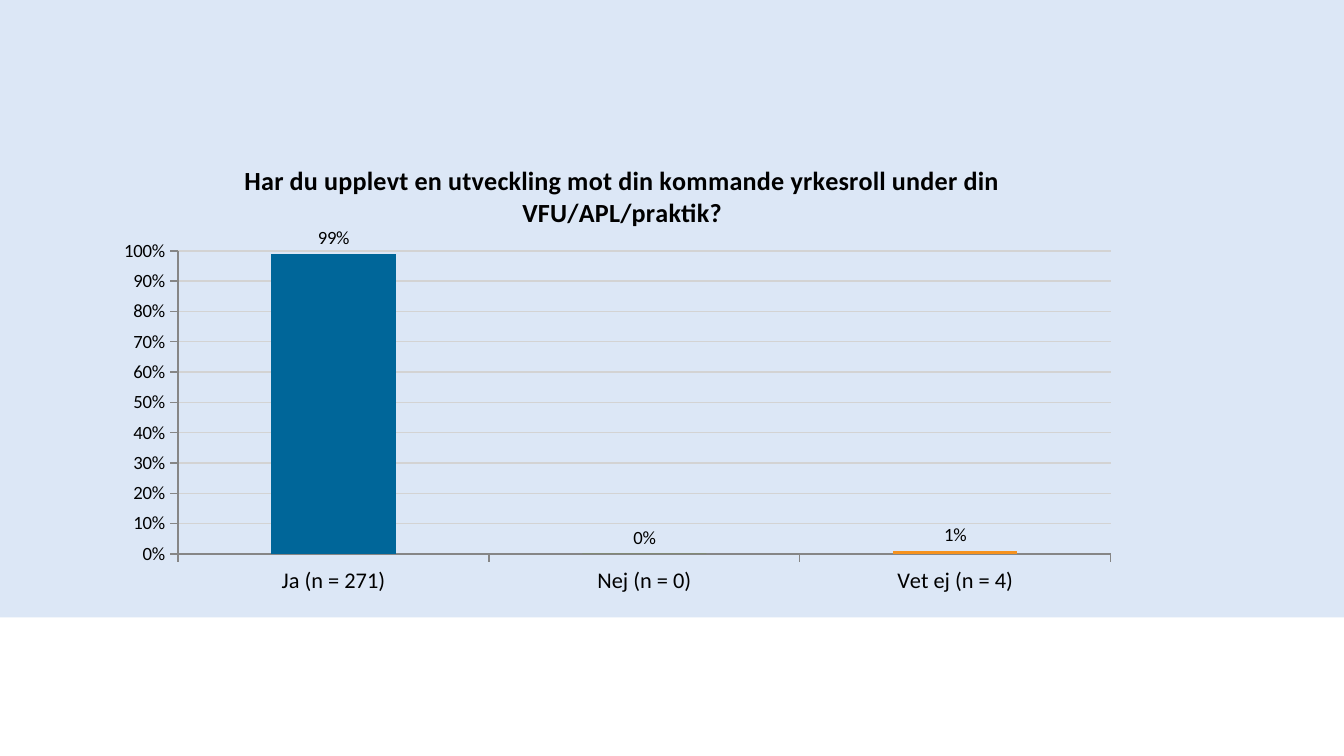
from dataclasses import dataclass

from lxml import etree
from pptx import Presentation
from pptx.chart.data import CategoryChartData
from pptx.dml.color import RGBColor
from pptx.enum.chart import XL_CHART_TYPE, XL_LABEL_POSITION, XL_TICK_MARK
from pptx.enum.shapes import MSO_SHAPE
from pptx.oxml.ns import qn
from pptx.util import Emu, Pt

PX = 9525
FONT = "Calibri"
BLACK = RGBColor(0x00, 0x00, 0x00)
PALE_BLUE = RGBColor(0xDC, 0xE7, 0xF6)
GRID_GREY = RGBColor(0xD3, 0xD3, 0xD3)
AXIS_GREY = RGBColor(0x86, 0x86, 0x86)
BLUE = RGBColor(0x00, 0x66, 0x99)
GREEN = RGBColor(0x64, 0x9E, 0x0B)
ORANGE = RGBColor(0xF6, 0x92, 0x1E)
COLUMNS = XL_CHART_TYPE.COLUMN_CLUSTERED
OUTSIDE_END = XL_LABEL_POSITION.OUTSIDE_END
TICK_OUT = XL_TICK_MARK.OUTSIDE
RECTANGLE = MSO_SHAPE.RECTANGLE
PERCENT = "0%"
QUESTION = "Har du upplevt en utveckling mot din kommande yrkesroll under din VFU/APL/praktik?"


@dataclass(frozen=True)
class Box:
    left: int
    top: int
    width: int
    height: int

    def emu(self) -> tuple:
        return tuple(Emu(n * PX) for n in (self.left, self.top, self.width, self.height))


@dataclass(frozen=True)
class Answer:
    label: str
    share: float
    color: RGBColor


SLIDE = Box(0, 0, 960, 540)
BACKDROP = Box(0, 0, 960, 441)
CHART = Box(76, 96, 732, 333)
ANSWERS = [
    Answer("Ja (n = 271)", 0.99, BLUE),
    Answer("Nej (n = 0)", 0, GREEN),
    Answer("Vet ej (n = 4)", 0.01, ORANGE),
]


def format_font(font, size: int, bold: bool = False) -> None:
    font.name = FONT
    font.size = Pt(size)
    font.bold = bold
    font.color.rgb = BLACK


def write_text(frame, text: str, *, size: int, bold: bool = False) -> None:
    run = frame.paragraphs[0].add_run()
    run.text = text
    format_font(run.font, size, bold)


def place_manually(parent, position: int, **fractions: float) -> None:
    for old in parent.findall(qn("c:layout")):
        parent.remove(old)
    layout = etree.Element(qn("c:layout"))
    manual = etree.SubElement(layout, qn("c:manualLayout"))
    if "w" in fractions:
        etree.SubElement(manual, qn("c:layoutTarget"), val="inner")
    for edge in ("x", "y"):
        etree.SubElement(manual, qn(f"c:{edge}Mode"), val="edge")
    for name, value in fractions.items():
        etree.SubElement(manual, qn(f"c:{name}"), val=str(value))
    parent.insert(position, layout)


def draw_backdrop(slide, box: Box) -> None:
    backdrop = slide.shapes.add_shape(RECTANGLE, *box.emu())
    backdrop.shadow.inherit = False
    backdrop.fill.solid()
    backdrop.fill.fore_color.rgb = PALE_BLUE
    backdrop.line.fill.background()


def format_axis(axis, size: int) -> None:
    axis.major_tick_mark = TICK_OUT
    axis.format.line.color.rgb = AXIS_GREY
    axis.format.line.width = Pt(0.75)
    format_font(axis.tick_labels.font, size)


def draw_answers(slide, box: Box, answers: list[Answer]) -> None:
    data = CategoryChartData(number_format=PERCENT)
    data.categories = [answer.label for answer in answers]
    data.add_series("Series 1", [answer.share for answer in answers])
    chart = slide.shapes.add_chart(COLUMNS, *box.emu(), data).chart
    format_font(chart.font, 18)
    chart.has_legend = False
    write_text(chart.chart_title.text_frame, QUESTION, size=14, bold=True)
    place_manually(chart.chart_title._element, 1, x=0.13, y=0.05)

    format_axis(chart.category_axis, 12)
    shares = chart.value_axis
    format_axis(shares, 10)
    shares.minimum_scale = 0
    shares.maximum_scale = 1
    shares.major_unit = 0.1
    shares.tick_labels.number_format = PERCENT
    shares.tick_labels.number_format_is_linked = False
    shares.major_gridlines.format.line.color.rgb = GRID_GREY
    shares.major_gridlines.format.line.width = Pt(0.75)

    plot = chart.plots[0]
    plot.gap_width = 150
    plot.vary_by_categories = False
    series = plot.series[0]
    series.format.fill.solid()
    series.format.fill.fore_color.rgb = BLUE
    for index, answer in enumerate(answers[1:], start=1):
        fill = series.points[index].format.fill
        fill.solid()
        fill.fore_color.rgb = answer.color
    labels = series.data_labels
    labels.show_value = True
    labels.position = OUTSIDE_END
    labels.number_format = PERCENT
    labels.number_format_is_linked = False
    format_font(labels.font, 10)
    plot_area = chart._chartSpace.chart.plotArea
    place_manually(plot_area, 0, x=0.07, y=0.25, w=0.91, h=0.65)


def main() -> None:
    deck = Presentation()
    _, _, deck.slide_width, deck.slide_height = SLIDE.emu()
    slide = deck.slides.add_slide(deck.slide_layouts[6])
    draw_backdrop(slide, BACKDROP)
    draw_answers(slide, CHART, ANSWERS)
    deck.save("out.pptx")


if __name__ == "__main__":
    main()
